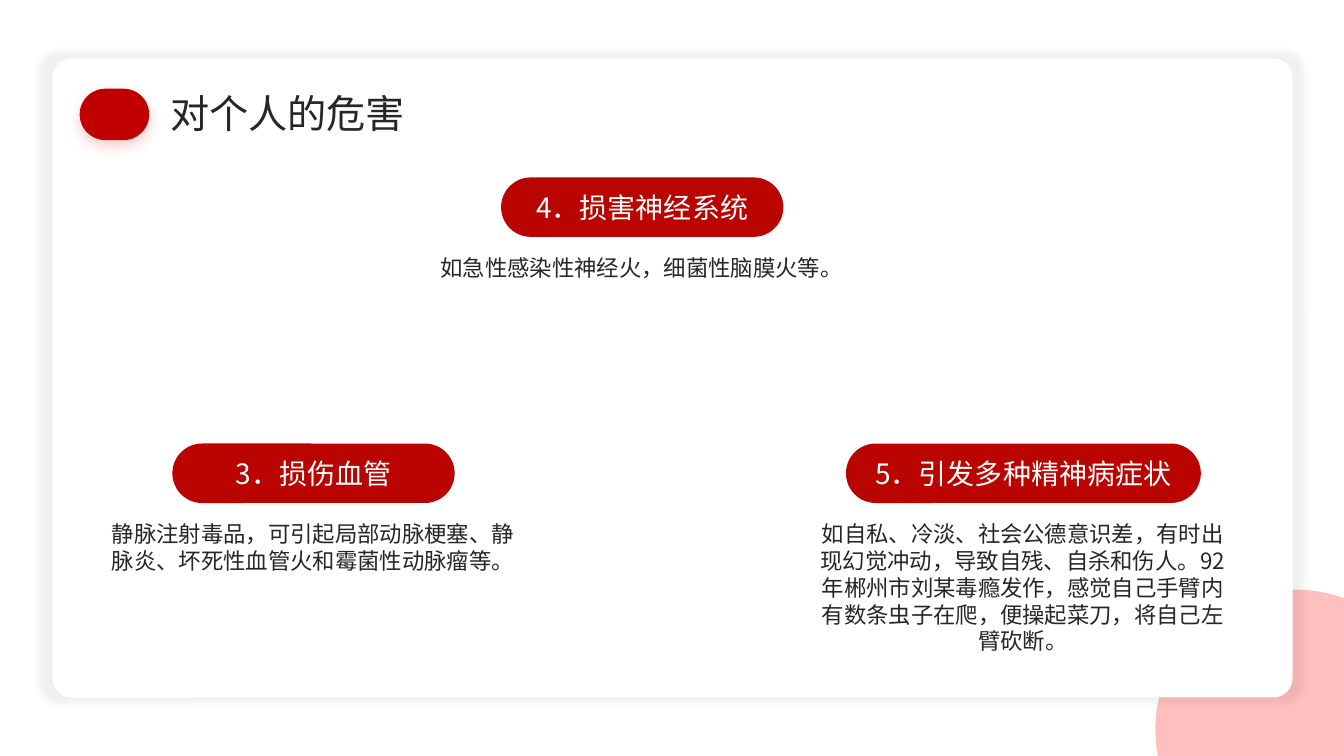
from dataclasses import dataclass
from math import acos, asin, cos, pi, sin

from lxml.etree import SubElement
from pptx import Presentation
from pptx.dml.color import RGBColor
from pptx.enum.shapes import MSO_SHAPE
from pptx.enum.text import MSO_ANCHOR, PP_ALIGN
from pptx.oxml.ns import qn
from pptx.util import Inches, Pt


@dataclass(frozen=True)
class Theme:
    font: str = "Noto Sans CJK SC"
    ink: str = "262626"
    white: str = "FFFFFF"
    pink: str = "FFBFBF"
    badge: str = "C00000"
    pill: str = "B90400"
    black: str = "000000"
    glow: str = "DE0000"
    title: int = 28
    label: int = 20
    body: int = 16
    leading: float = 1.2


T = Theme()
SLIDE_W, SLIDE_H = 13.33, 7.5


def paint(s, color):
    s.shadow.inherit = False
    s.fill.solid()
    s.fill.fore_color.rgb = RGBColor.from_string(color)
    s.line.fill.background()


def add_shadow(s, color, alpha, blur, dist=0, angle=0, scale=100):
    effects = s._element.spPr.find(qn("a:effectLst"))
    shadow = SubElement(effects, qn("a:outerShdw"), {
        "blurRad": str(Pt(blur)), "dist": str(Pt(dist)), "dir": str(angle * 60000),
        "sx": str(scale * 1000), "sy": str(scale * 1000),
        "algn": "ctr", "rotWithShape": "0"})
    clr = SubElement(shadow, qn("a:srgbClr"), val=color)
    SubElement(clr, qn("a:alpha"), val=str(alpha * 1000))


def add_rounded(slide, box, color, corner):
    s = slide.shapes.add_shape(MSO_SHAPE.ROUNDED_RECTANGLE, *map(Inches, box))
    paint(s, color)
    s.adjustments[0] = corner
    return s


def write(s, text, size, color, align=PP_ALIGN.CENTER, wrap=True):
    tf = s.text_frame
    tf.word_wrap = wrap
    p = tf.paragraphs[0]
    p.alignment = align
    p.line_spacing = Pt(size * T.leading)
    r = p.add_run()
    r.text = text
    r.font.name = T.font
    r.font.size = Pt(size)
    r.font.color.rgb = RGBColor.from_string(color)
    SubElement(r._r.get_or_add_rPr(), qn("a:ea"), typeface=T.font)
    return tf


def add_text(slide, box, *args, **kwargs):
    return write(slide.shapes.add_textbox(*map(Inches, box)), *args, **kwargs)


# Pink disc cut off by the right and bottom slide edges
def add_corner_disc(slide, cx, cy, radius, steps=90):
    start = pi - asin((SLIDE_H - cy) / radius)
    end = 2 * pi - acos((SLIDE_W - cx) / radius)
    angles = [start + (end - start) * i / steps for i in range(steps + 1)]
    points = [(Inches(cx + radius * cos(a)), Inches(cy + radius * sin(a))) for a in angles]
    builder = slide.shapes.build_freeform(*points[0], scale=1.0)
    builder.add_line_segments(points[1:] + [(Inches(SLIDE_W), Inches(SLIDE_H))], close=True)
    paint(builder.convert_to_shape(), T.pink)


# White card behind the content
def add_card(slide, box):
    s = add_rounded(slide, box, T.white, 0.03)
    add_shadow(s, T.black, 5, 5, scale=102)


# Plain badge and slide title
def add_header(slide, left, top, title):
    s = add_rounded(slide, (left, top, 0.69, 0.51), T.badge, 0.5)
    add_shadow(s, T.glow, 20, 10, 4, 90)
    add_text(slide, (left + 0.8, top - 0.04, 2.56, 0.57), title, T.title, T.ink,
             align=PP_ALIGN.LEFT, wrap=False)


# Red pill with a centred explanation below
def add_harm(slide, left, top, pill_left, pill_width, label, body, height):
    s = add_rounded(slide, (pill_left, top, pill_width, 0.59), T.pill, 0.5)
    tf = write(s, label, T.label, T.white)
    tf.vertical_anchor = MSO_ANCHOR.MIDDLE
    add_text(slide, (left, top + 0.71, 4.29, height), body, T.body, T.ink)


HARMS = [
    (0.96, 4.4, 1.71, 2.8, "3．损伤血管",
     "静脉注射毒品，可引起局部动脉梗塞、静脉炎、坏死性血管火和霉菌性动脉瘤等。", 0.64),
    (4.22, 1.76, 4.97, 2.8, "4．损害神经系统",
     "如急性感染性神经火，细菌性脑膜火等。", 0.37),
    (8, 4.4, 8.39, 3.52, "5．引发多种精神病症状",
     "如自私、冷淡、社会公德意识差，有时出现幻觉冲动，导致自残、自杀和伤人。"
     "92年郴州市刘某毒瘾发作，感觉自己手臂内有数条虫子在爬，便操起菜刀，将自己左臂砍断。", 1.45),
]


def main():
    prs = Presentation()
    prs.slide_width, prs.slide_height = Inches(SLIDE_W), Inches(SLIDE_H)
    slide = prs.slides.add_slide(prs.slide_layouts[6])
    add_corner_disc(slide, 12.85, 7.24, 1.39)
    add_card(slide, (0.52, 0.58, 12.3, 6.34))
    add_header(slide, 0.79, 0.88, "对个人的危害")
    for harm in HARMS:
        add_harm(slide, *harm)
    prs.save("out.pptx")


if __name__ == "__main__":
    main()
